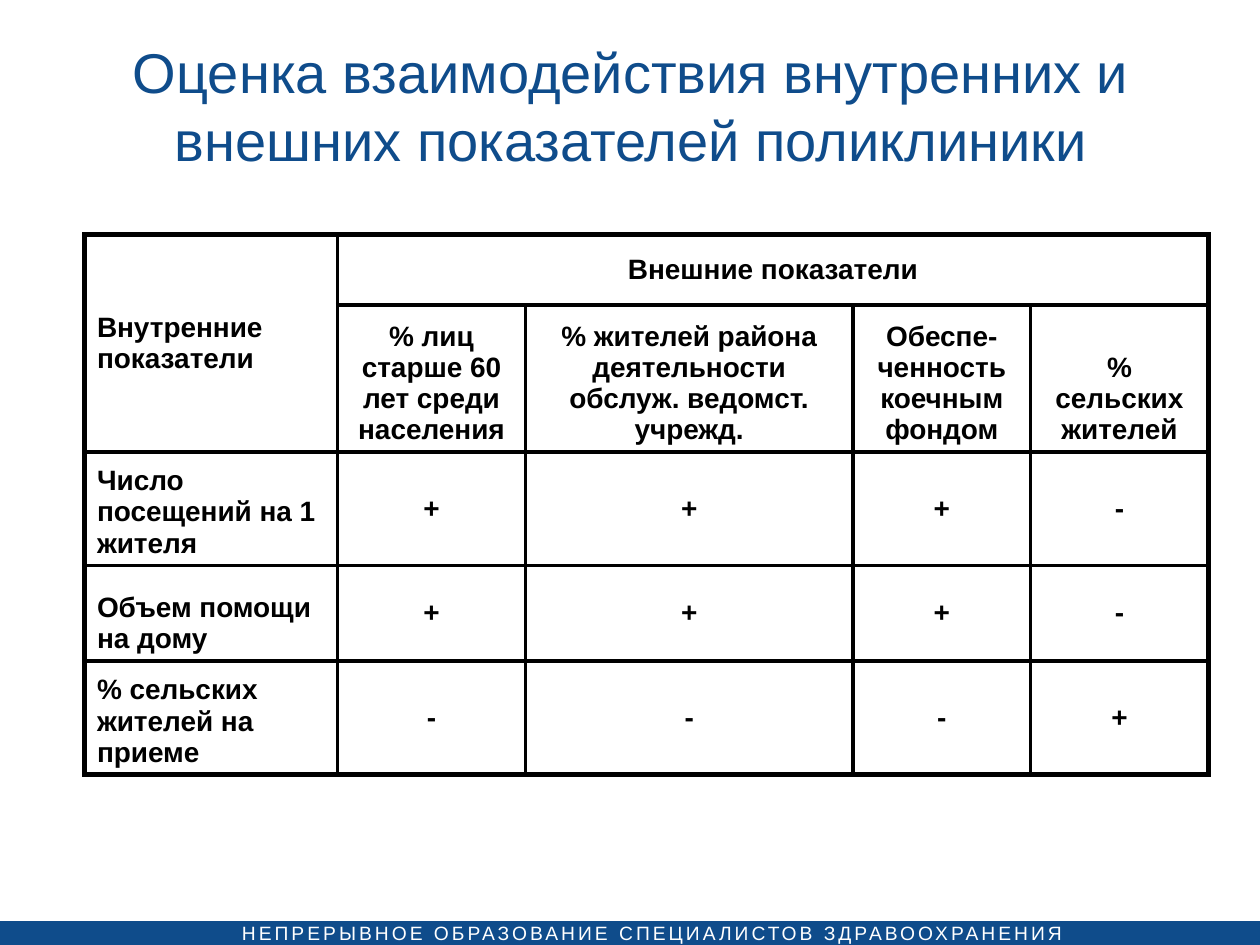
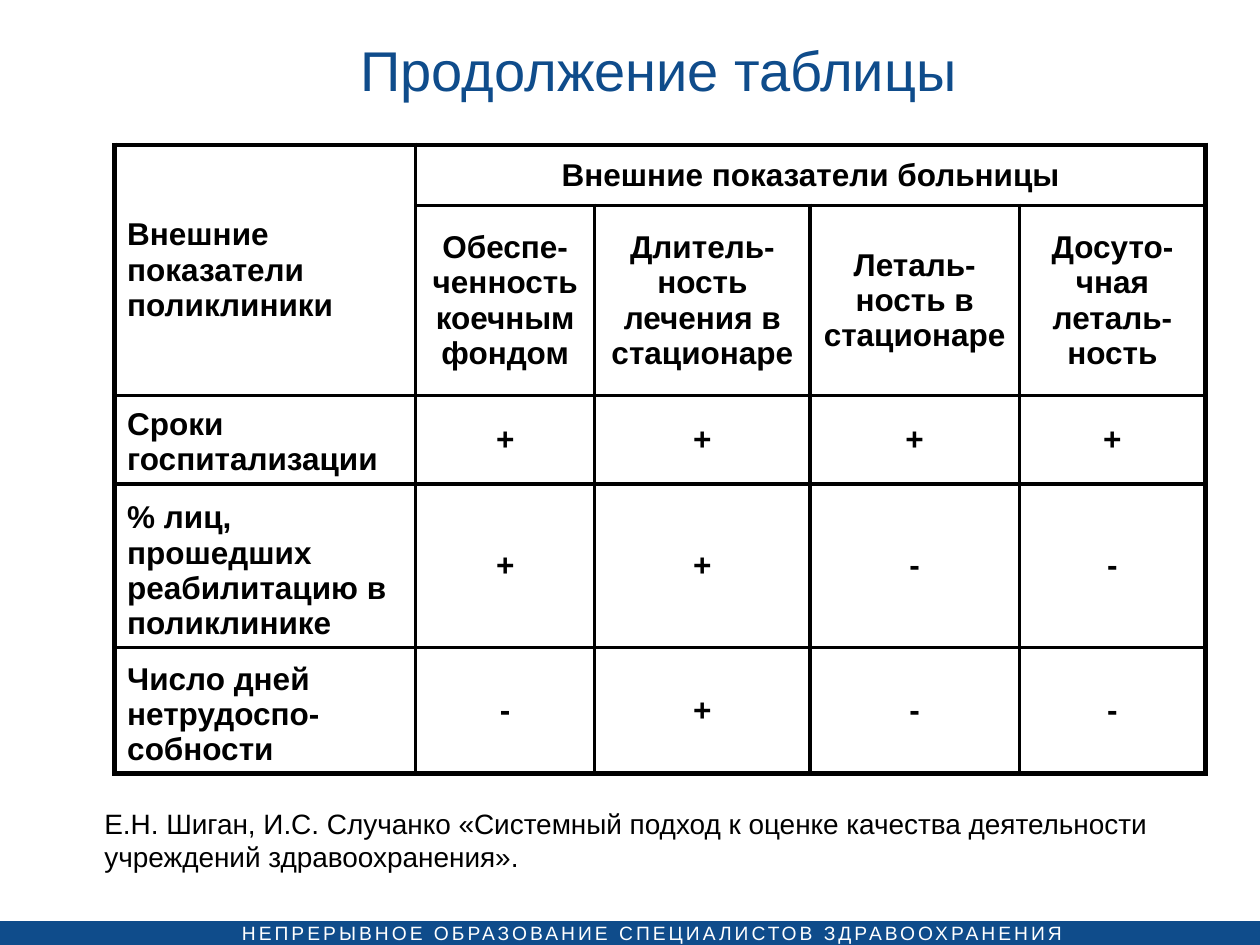
from dataclasses import dataclass

from lxml import etree
from pptx import Presentation
from pptx.dml.color import RGBColor
from pptx.enum.shapes import MSO_SHAPE
from pptx.enum.text import MSO_ANCHOR, MSO_AUTO_SIZE, PP_ALIGN
from pptx.oxml.ns import qn
from pptx.util import Inches, Pt

# Shared look
BLUE = RGBColor(0x0F, 0x4C, 0x8B)
BLACK = RGBColor(0, 0, 0)
WHITE = RGBColor(0xFF, 0xFF, 0xFF)
FONT = "Arial"
FOOTER = "НЕПРЕРЫВНОЕ ОБРАЗОВАНИЕ СПЕЦИАЛИСТОВ ЗДРАВООХРАНЕНИЯ"
OUTER, INNER = Pt(3), Pt(2.25)
TITLE_ONLY = 5
RECTANGLE = MSO_SHAPE.RECTANGLE
MIDDLE, BOTTOM = MSO_ANCHOR.MIDDLE, MSO_ANCHOR.BOTTOM
LEFT, CENTER = PP_ALIGN.LEFT, PP_ALIGN.CENTER
NO_AUTOFIT = MSO_AUTO_SIZE.NONE


@dataclass
class Box:
    left: float
    top: float
    width: float
    height: float

    def lengths(self) -> tuple:
        return tuple(map(Inches, (self.left, self.top, self.width, self.height)))


@dataclass
class IndicatorTable:
    box: Box
    widths: list[float]
    heights: list[float]  # least heights: rows grow with their text
    size: int
    corner: str
    group: str
    columns: list[str]
    rows: list[tuple[str, str]]  # row label and one sign per column
    column_anchor: MSO_ANCHOR


@dataclass
class IndicatorSlide:
    title: str
    title_box: Box
    table: IndicatorTable
    citation: str = ""


SLIDES = [
    IndicatorSlide(
        "Оценка взаимодействия внутренних и внешних показателей поликлиники",
        Box(0.51, 0.21, 9, 1.25),
        IndicatorTable(
            Box(0.67, 1.86, 8.93, 4.29),
            [2.01, 1.49, 2.6, 1.41, 1.41],
            [0.56, 0.41, 0.67, 0.76, 0.67], 16,
            "Внутренние показатели", "Внешние показатели",
            ["% лиц старше 60 лет среди населения",
             "% жителей района деятельности обслуж. ведомст. учрежд.",
             "Обеспе-ченность коечным фондом",
             "% сельских жителей"],
            [("Число посещений на 1 жителя", "+++-"),
             ("Объем помощи на дому", "+++-"),
             ("% сельских жителей на приеме", "---+")],
            BOTTOM,
        ),
    ),
    IndicatorSlide(
        "Продолжение таблицы",
        Box(0.73, 0.13, 9, 0.83),
        IndicatorTable(
            Box(0.91, 1.15, 8.66, 4.99),
            [2.39, 1.42, 1.71, 1.66, 1.48],
            [0.48, 1.51, 0.7, 0.89, 0.89], 18,
            "Внешние\nпоказатели\nполиклиники", "Внешние показатели больницы",
            ["Обеспе-ченность коечным фондом",
             "Длитель-ность лечения в стационаре",
             "Леталь-ность в стационаре",
             "Досуто-\nчная леталь-ность"],
            [("Сроки госпитализации", "++++"),
             ("% лиц, прошедших реабилитацию в поликлинике", "++--"),
             ("Число дней нетрудоспо-собности", "-+--")],
            MIDDLE,
        ),
        "Е.Н. Шиган, И.С. Случанко «Системный подход к оценке качества "
        "деятельности учреждений здравоохранения».",
    ),
]


def write(tf, text: str, size: int, color: RGBColor, align=LEFT, bold: bool = False) -> None:
    tf.text = text
    for p in tf.paragraphs:
        p.alignment = align
        p.font.name = FONT
        p.font.size = Pt(size)
        p.font.bold = bold
        p.font.color.rgb = color


def add_text(slide, box: Box, text: str, size: int, color: RGBColor):
    tf = slide.shapes.add_textbox(*box.lengths()).text_frame
    tf.word_wrap = True
    write(tf, text, size, color)
    return tf


def add_title(slide, text: str, box: Box) -> None:
    title = slide.shapes.title
    title.left, title.top, title.width, title.height = box.lengths()
    tf = title.text_frame
    tf.auto_size = NO_AUTOFIT
    tf.vertical_anchor = MIDDLE
    write(tf, text, 32, BLUE, CENTER)


def add_footer(slide) -> None:
    band = slide.shapes.add_shape(RECTANGLE, *Box(-0.04, 7.31, 10.04, 0.22).lengths())
    band.shadow.inherit = False
    band.fill.solid()
    band.fill.fore_color.rgb = BLUE
    band.line.fill.background()
    tf = add_text(slide, Box(1.92, 7.31, 6.63, 0.19), FOOTER, 11, WHITE)
    tf.margin_left = tf.margin_right = tf.margin_top = tf.margin_bottom = 0
    tf.word_wrap = False
    # Letter spacing in hundredths of a point
    tf.paragraphs[0].runs[0].font._element.set("spc", "170")


def set_borders(cell, outer: dict[str, bool]) -> None:
    tc_pr = cell._tc.get_or_add_tcPr()
    for i, (side, is_outer) in enumerate(outer.items()):
        ln = etree.Element(qn(f"a:ln{side}"), w=str(OUTER if is_outer else INNER))
        fill = etree.SubElement(ln, qn("a:solidFill"))
        etree.SubElement(fill, qn("a:srgbClr"), val=str(BLACK))
        tc_pr.insert(i, ln)


def add_indicator_table(slide, t: IndicatorTable) -> None:
    n_rows, n_cols = len(t.heights), len(t.widths)
    frame = slide.shapes.add_table(n_rows, n_cols, *t.box.lengths())
    table = frame.table
    table.first_row = table.horz_banding = False
    for column, width in zip(table.columns, t.widths):
        column.width = Inches(width)
    for row, height in zip(table.rows, t.heights):
        row.height = Inches(height)
    frame.height = Inches(t.box.height)

    # Two header rows: the corner spans down, the group heading spans across
    table.cell(0, 0).merge(table.cell(1, 0))
    table.cell(0, 1).merge(table.cell(0, n_cols - 1))
    texts = [[t.corner, t.group], ["", *t.columns]]
    texts += [[label, *signs] for label, signs in t.rows]

    for r in range(n_rows):
        for c in range(n_cols):
            cell = table.cell(r, c)
            cell.fill.background()
            set_borders(cell, {
                "L": c == 0,
                "R": c + cell.span_width == n_cols,
                "T": r == 0,
                "B": r == n_rows - 1,
            })
            if cell.is_spanned:
                continue
            write(cell.text_frame, texts[r][c], t.size, BLACK,
                  CENTER if c else LEFT, bold=True)
            if r == 1:
                cell.vertical_anchor = t.column_anchor
            else:
                cell.vertical_anchor = BOTTOM if r > 1 and c == 0 else MIDDLE


def main() -> None:
    prs = Presentation()
    prs.slide_width, prs.slide_height = Inches(10), Inches(7.5)
    for content in SLIDES:
        slide = prs.slides.add_slide(prs.slide_layouts[TITLE_ONLY])
        add_footer(slide)
        add_title(slide, content.title, content.title_box)
        add_indicator_table(slide, content.table)
        if content.citation:
            add_text(slide, Box(0.73, 6.35, 9.29, 0.64), content.citation, 16, BLACK)
    prs.save("out.pptx")


if __name__ == "__main__":
    main()
